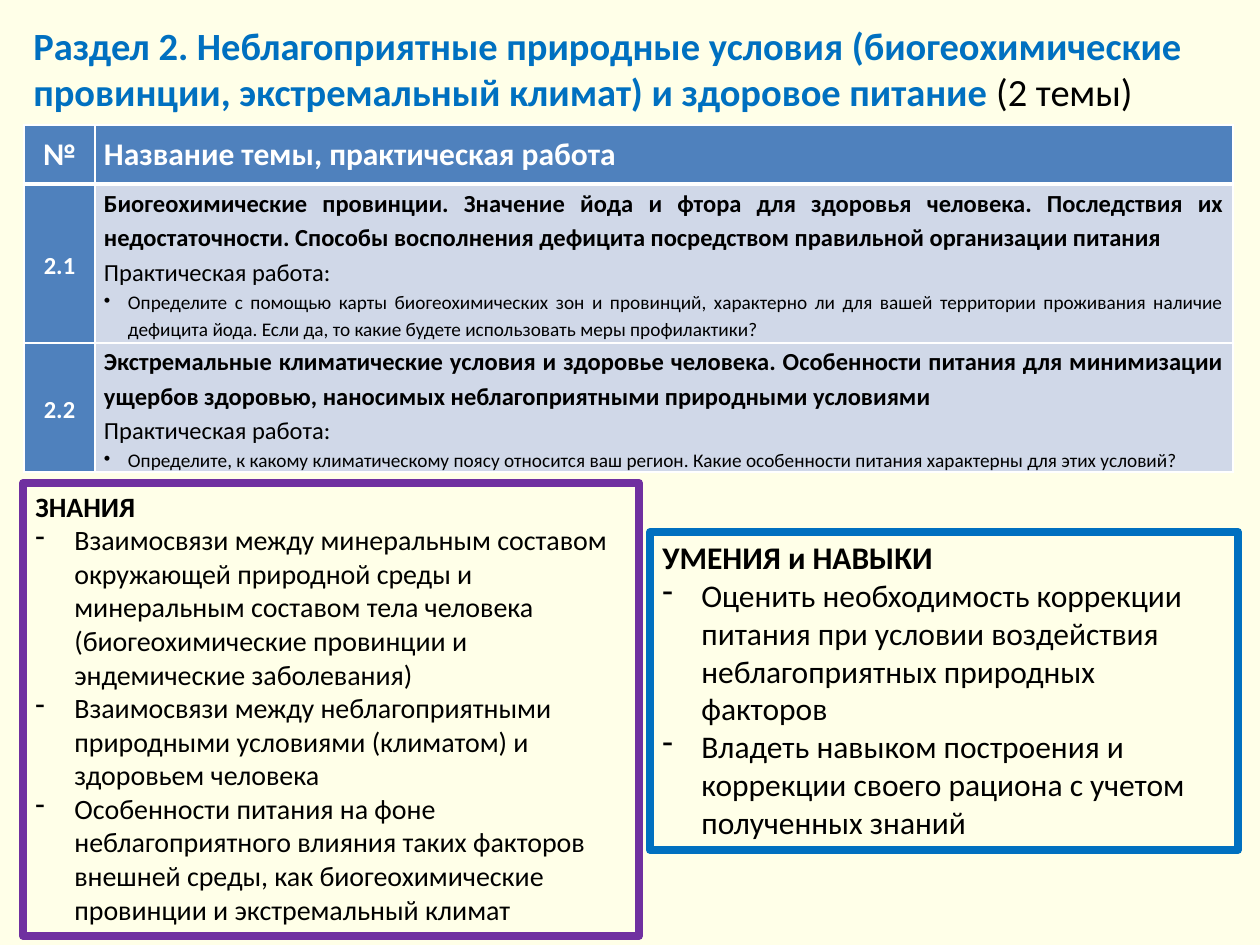
"""Build the slide on section 2: topics table, knowledge box and skills box."""
from pptx import Presentation
from pptx.dml.color import RGBColor
from pptx.enum import shapes, text
from pptx.oxml import parse_xml
from pptx.oxml.ns import nsdecls
from pptx.util import Emu, Pt

BLUE, PURPLE, BLACK, WHITE = "0070C0", "7030A0", "000000", "FFFFFF"
HEAD, BODY, PAGE = "4F81BD", "D0D8E8", "FFFFE8"
TITLE = [
    ("Раздел 2. Неблагоприятные природные условия (биогеохимические провинции, "
     "экстремальный климат) и здоровое питание ", BLUE, True),
    ("(2 темы)", BLACK, False),
]
HEADS = ("№", "Название темы, практическая работа")
WORK = "Практическая работа:"
TOPICS = [
    ("2.1",
     "Биогеохимические провинции. Значение йода и фтора для здоровья человека. "
     "Последствия их недостаточности. Способы восполнения дефицита посредством "
     "правильной организации питания",
     "Определите с помощью карты биогеохимических зон и провинций, характерно ли для "
     "вашей территории проживания наличие дефицита йода. Если да, то какие будете "
     "использовать меры профилактики?"),
    ("2.2",
     "Экстремальные климатические условия и здоровье человека. Особенности питания для "
     "минимизации ущербов здоровью, наносимых неблагоприятными природными условиями",
     "Определите, к какому климатическому поясу относится ваш регион. Какие особенности "
     "питания характерны для этих условий?"),
]
BOXES = [
    ((23, 483, 616, 453), PURPLE, 16, "ЗНАНИЯ", [
        "Взаимосвязи между минеральным составом окружающей природной среды и минеральным "
        "составом тела человека (биогеохимические провинции и эндемические заболевания)",
        "Взаимосвязи между неблагоприятными природными условиями (климатом) и здоровьем "
        "человека",
        "Особенности питания на фоне неблагоприятного влияния таких факторов внешней "
        "среды, как биогеохимические провинции и экстремальный климат"]),
    ((650, 532, 588, 318), BLUE, 18, "УМЕНИЯ и НАВЫКИ", [
        "Оценить необходимость коррекции питания при условии воздействия неблагоприятных "
        "природных факторов",
        "Владеть навыком построения и коррекции своего рациона с учетом полученных знаний"]),
]
COLS, ROWS = (71, 1138), (59, 159, 129)


def px(n):
    return Emu(round(n * 914400 / 126))


def rgb(code):
    return RGBColor.from_string(code)


def style(run, size, color, bold):
    font = run.font
    font.name, font.size, font.bold = "Calibri", Pt(size), bold
    font.color.rgb = rgb(color)


def write(frame, paras, align=text.PP_ALIGN.LEFT, space=None):
    """Fill a frame from (text, size, color, bold, bullet, indent) rows."""
    frame.text = "\n".join(row[0] for row in paras)
    for para, (_, size, color, bold, mark, dent) in zip(frame.paragraphs, paras):
        para.alignment, para.line_spacing = align, space
        style(para.runs[0], size, color, bold)
        if mark:
            prop = para._p.get_or_add_pPr()
            prop.set("marL", str(px(dent)))
            prop.set("indent", str(-px(dent)))
            prop.append(parse_xml(f'<a:buChar {nsdecls("a")} char="{mark}"/>'))


def paint(cell, color, base):
    """Set the fill, margins and white borders of a cell."""
    prop = cell._tc.get_or_add_tcPr()
    for side, wide in (("L", 1), ("R", 1), ("T", 1), ("B", base)):
        prop.append(parse_xml(
            f'<a:ln{side} {nsdecls("a")} w="{Pt(wide)}"><a:solidFill>'
            f'<a:srgbClr val="{WHITE}"/></a:solidFill></a:ln{side}>'))
    cell.fill.solid()
    cell.fill.fore_color.rgb = rgb(color)
    cell.margin_left = cell.margin_right = px(9)
    cell.margin_top = cell.margin_bottom = 0
    cell.vertical_anchor = text.MSO_ANCHOR.MIDDLE


def add_title(slide):
    frame = slide.shapes.add_textbox(px(21), px(16), px(1201), px(100)).text_frame
    frame.word_wrap = True
    for words, color, bold in TITLE:
        run = frame.paragraphs[0].add_run()
        run.text = words
        style(run, 22, color, bold)


def add_topics(slide):
    grid = slide.shapes.add_table(len(ROWS), len(COLS), px(24), px(125),
                                  px(sum(COLS)), px(sum(ROWS))).table
    grid.horz_banding = False
    for col, wide in zip(grid.columns, COLS):
        col.width = px(wide)
    for row, high in zip(grid.rows, ROWS):
        row.height = px(high)
    mid, left, full = text.PP_ALIGN.CENTER, text.PP_ALIGN.LEFT, text.PP_ALIGN.JUSTIFY
    for i, (words, align) in enumerate(zip(HEADS, (mid, left))):
        cell = grid.cell(0, i)
        paint(cell, HEAD, 3)
        write(cell.text_frame, [(words, 18, WHITE, True, None, 0)], align)
    for i, (num, name, task) in enumerate(TOPICS, 1):
        key, main = grid.cell(i, 0), grid.cell(i, 1)
        paint(key, HEAD, 1)
        paint(main, BODY, 1)
        write(key.text_frame, [(num, 14, WHITE, True, None, 0)], mid, 1.15)
        write(main.text_frame, [(name, 14, BLACK, True, None, 0),
                                (WORK, 14, BLACK, False, None, 0),
                                (task, 11, BLACK, False, "•", 24)], full, 1.15)


def add_box(slide, area, color, size, head, items):
    box = slide.shapes.add_shape(shapes.MSO_SHAPE.RECTANGLE, *map(px, area))
    box.shadow.inherit = False
    box.fill.background()
    box.line.color.rgb, box.line.width = rgb(color), Pt(4.5)
    box.line._get_or_add_ln().append(parse_xml(f'<a:round {nsdecls("a")}/>'))
    frame = box.text_frame
    frame.word_wrap, frame.vertical_anchor = True, text.MSO_ANCHOR.TOP
    frame.auto_size = text.MSO_AUTO_SIZE.SHAPE_TO_FIT_TEXT
    write(frame, [(head, size, BLACK, True, None, 0)]
          + [(item, size, BLACK, False, "-", 39) for item in items])


def main():
    deck = Presentation()
    deck.slide_width, deck.slide_height = px(1260), px(945)
    slide = deck.slides.add_slide(deck.slide_layouts[6])
    slide.background.fill.solid()
    slide.background.fill.fore_color.rgb = rgb(PAGE)
    add_title(slide)
    for box in BOXES:
        add_box(slide, *box)
    add_topics(slide)
    deck.save("out.pptx")


if __name__ == "__main__":
    main()
